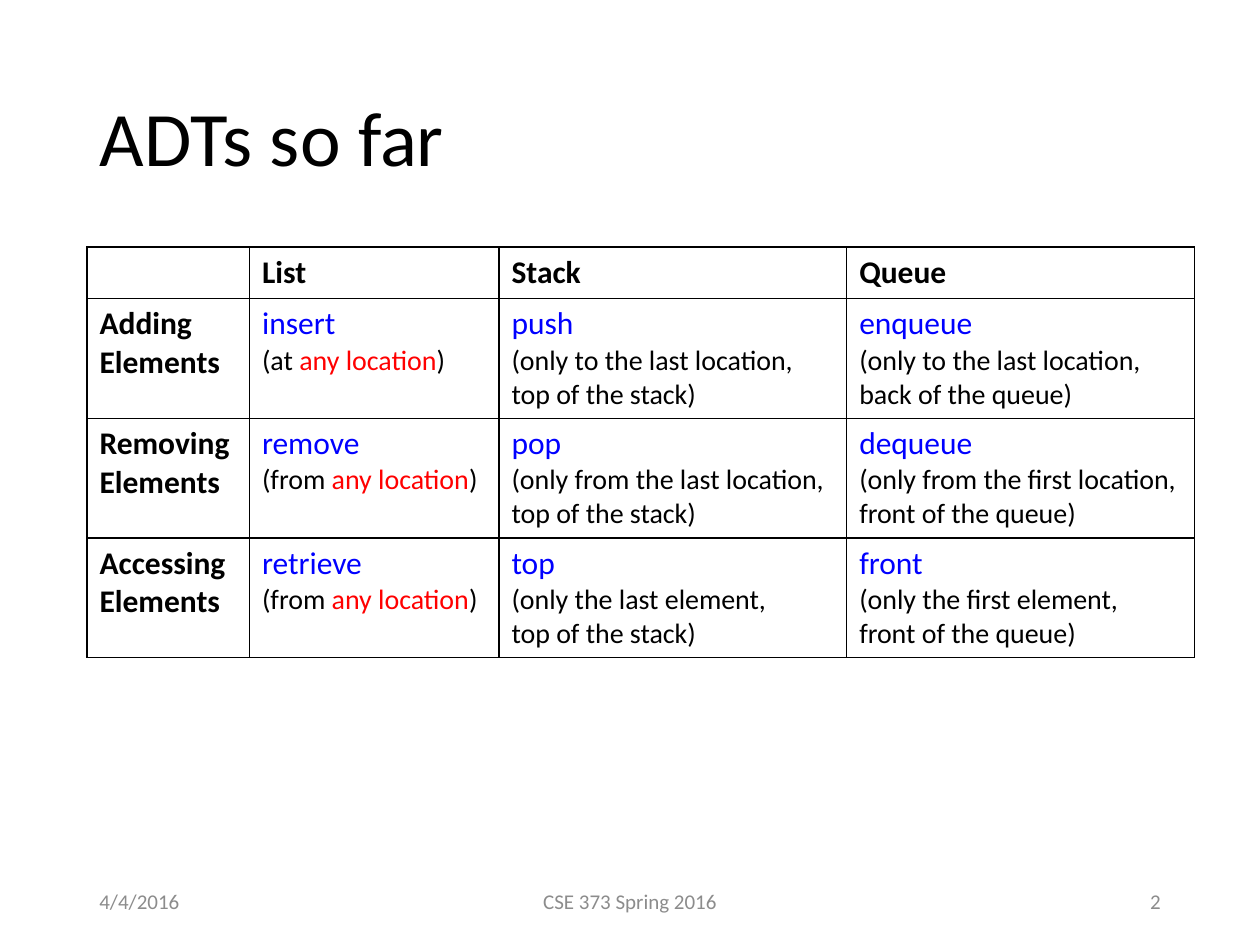
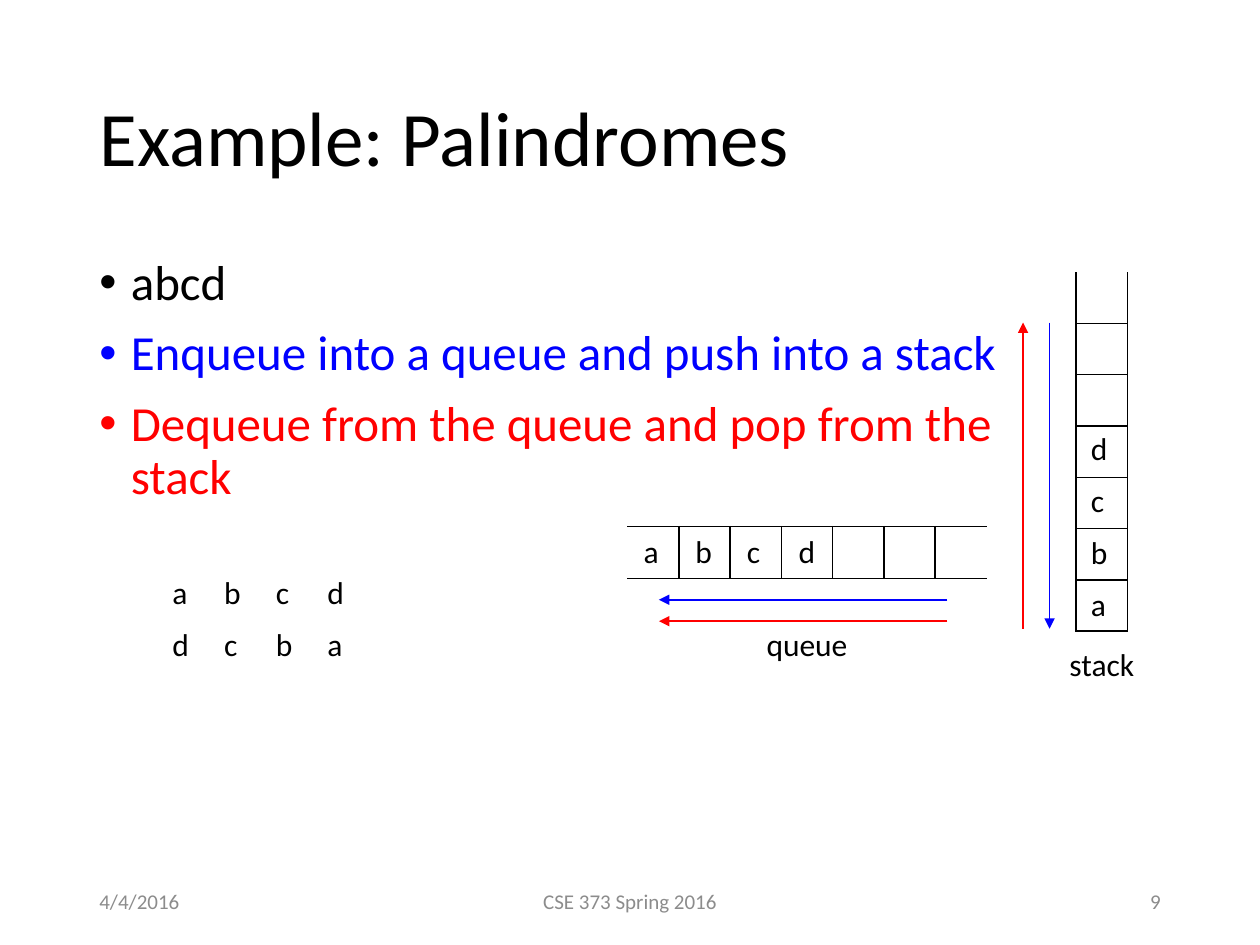
"""Build two slides on list, stack and queue operations and a palindrome check."""

from dataclasses import dataclass

from lxml.etree import SubElement
from pptx import Presentation
from pptx.dml.color import RGBColor
from pptx.enum.shapes import MSO_CONNECTOR
from pptx.enum.text import MSO_ANCHOR, MSO_AUTO_SIZE, PP_ALIGN
from pptx.oxml.ns import qn
from pptx.presentation import Presentation as Deck
from pptx.slide import Slide
from pptx.table import Table, _Cell
from pptx.text.text import TextFrame, _Paragraph
from pptx.util import Inches, Pt


@dataclass(frozen=True)
class Theme:
    font: str = "Calibri"
    ink: str = "000000"
    blue: str = "0000FF"
    red: str = "FF0000"
    gray: str = "8C8C8C"
    title_size: int = 44
    bullet_size: int = 28
    label_size: int = 18
    note_size: int = 16
    footer_size: int = 12
    line_width: int = 1


@dataclass(frozen=True)
class Box:
    left: float
    top: float
    width: float
    height: float

    def lengths(self) -> tuple[int, int, int, int]:
        return (Inches(self.left), Inches(self.top),
                Inches(self.width), Inches(self.height))


@dataclass(frozen=True)
class Operation:
    name: str
    notes: tuple[str, ...]


@dataclass(frozen=True)
class Footer:
    text: str
    box: Box
    align: PP_ALIGN


@dataclass(frozen=True)
class Letters:
    text: str
    left: float
    top: float
    step_x: float = 0
    step_y: float = 0


@dataclass(frozen=True)
class Arrow:
    start: tuple[float, float]
    end: tuple[float, float]
    color: str


THEME = Theme()
TITLE_BOX = Box(0.69, 0.4, 8.62, 1.45)
HIGHLIGHT = "any location"
ALL_EDGES = "LRTB"
SLOTS = 7
SLOT_STEP = 0.41
STORE_LENGTH = 2.85

ADT_NAMES = ("List", "Stack", "Queue")
ADT_COLUMNS = (1.29, 1.98, 2.76, 2.76)
ADT_ROWS = (0.41, 0.95, 0.95, 0.95)
OPERATIONS = {
    "Adding Elements": (
        Operation("insert", ("(at any location)",)),
        Operation("push", ("(only to the last location,", "top of the stack)")),
        Operation("enqueue", ("(only to the last location,", "back of the queue)")),
    ),
    "Removing Elements": (
        Operation("remove", ("(from any location)",)),
        Operation("pop", ("(only from the last location,", "top of the stack)")),
        Operation("dequeue", ("(only from the first location,", "front of the queue)")),
    ),
    "Accessing Elements": (
        Operation("retrieve", ("(from any location)",)),
        Operation("top", ("(only the last element,", "top of the stack)")),
        Operation("front", ("(only the first element,", "front of the queue)")),
    ),
}

STEPS = (
    ("abcd", THEME.ink),
    ("Enqueue into a queue and push into a stack", THEME.blue),
    ("Dequeue from the queue and pop from the stack", THEME.red),
)
LETTERS = (
    Letters("abcd", 5.01, 4.17, step_x=SLOT_STEP),
    Letters("abcd", 8.56, 4.59, step_y=-SLOT_STEP),
    Letters("abcd", 1.27, 4.5, step_x=SLOT_STEP),
    Letters("dcba", 1.27, 4.91, step_x=SLOT_STEP),
)
ARROWS = (
    Arrow((7.52, 4.76), (5.23, 4.76), THEME.blue),
    Arrow((7.52, 4.93), (5.23, 4.93), THEME.red),
    Arrow((8.33, 2.56), (8.33, 4.99), THEME.blue),
    Arrow((8.12, 4.99), (8.12, 2.56), THEME.red),
)
STORE_LABELS = (
    ("queue", Box(5.32, 4.91, 2.17, 0.4)),
    ("stack", Box(8.2, 5.07, 1.09, 0.4)),
)


def style(paragraph: _Paragraph, size: int, color: str = THEME.ink,
          bold: bool = False) -> None:
    font = paragraph.font
    font.name = THEME.font
    font.size = Pt(size)
    font.bold = bold
    font.color.rgb = RGBColor.from_string(color)


def add_text(slide: Slide, text: str, box: Box, size: int,
             color: str = THEME.ink, align: PP_ALIGN = PP_ALIGN.LEFT,
             anchor: MSO_ANCHOR = MSO_ANCHOR.TOP) -> None:
    frame = slide.shapes.add_textbox(*box.lengths()).text_frame
    frame.word_wrap = True
    frame.vertical_anchor = anchor
    paragraph = frame.paragraphs[0]
    paragraph.text = text
    paragraph.alignment = align
    style(paragraph, size, color)


def add_page(deck: Deck, heading: str, number: int) -> Slide:
    slide = deck.slides.add_slide(deck.slide_layouts[5])
    title = slide.shapes.title
    title.left, title.top, title.width, title.height = TITLE_BOX.lengths()
    frame = title.text_frame
    frame.text = heading
    frame.auto_size = MSO_AUTO_SIZE.NONE
    frame.vertical_anchor = MSO_ANCHOR.MIDDLE
    paragraph = frame.paragraphs[0]
    paragraph.alignment = PP_ALIGN.LEFT
    paragraph.line_spacing = 0.9
    style(paragraph, THEME.title_size)

    footers = (
        Footer("4/4/2016", Box(0.69, 6.95, 2.25, 0.4), PP_ALIGN.LEFT),
        Footer(str(number), Box(7.06, 6.95, 2.25, 0.4), PP_ALIGN.RIGHT),
        Footer("CSE 373 Spring 2016", Box(3.31, 6.95, 3.38, 0.4), PP_ALIGN.CENTER),
    )
    for footer in footers:
        add_text(slide, footer.text, footer.box, THEME.footer_size, THEME.gray,
                 footer.align, MSO_ANCHOR.MIDDLE)
    return slide


def draw_edges(cell: _Cell, edges: str) -> None:
    properties = cell._tc.get_or_add_tcPr()
    for edge in ALL_EDGES:
        line = SubElement(properties, qn(f"a:ln{edge}"), w=str(Pt(THEME.line_width)))
        if edge in edges:
            fill = SubElement(line, qn("a:solidFill"))
            SubElement(fill, qn("a:srgbClr"), val=THEME.ink)
        else:
            SubElement(line, qn("a:noFill"))
    cell.fill.background()


def add_grid(slide: Slide, box: Box, rows: tuple[float, ...],
             columns: tuple[float, ...],
             open_edges: dict[tuple[int, int], str]) -> Table:
    table = slide.shapes.add_table(len(rows), len(columns), *box.lengths()).table
    table.first_row = table.horz_banding = False
    for row, height in zip(table.rows, rows):
        row.height = Inches(height)
    for column, width in zip(table.columns, columns):
        column.width = Inches(width)
    for r in range(len(rows)):
        for c in range(len(columns)):
            missing = open_edges.get((r, c), "")
            draw_edges(table.cell(r, c), ALL_EDGES.replace(missing, ""))
    return table


def write_heading(cell: _Cell, text: str) -> None:
    cell.text = text
    style(cell.text_frame.paragraphs[0], THEME.label_size, bold=True)


def write_note(frame: TextFrame, note: str) -> None:
    paragraph = frame.add_paragraph()
    style(paragraph, THEME.note_size)
    for part in filter(None, note.partition(HIGHLIGHT)):
        run = paragraph.add_run()
        run.text = part
        if part == HIGHLIGHT:
            run.font.color.rgb = RGBColor.from_string(THEME.red)


def write_operation(cell: _Cell, operation: Operation) -> None:
    cell.text = operation.name
    style(cell.text_frame.paragraphs[0], THEME.label_size, THEME.blue)
    for note in operation.notes:
        write_note(cell.text_frame, note)


def add_steps(slide: Slide) -> None:
    frame = slide.shapes.add_textbox(*Box(0.69, 2, 7.38, 4.76).lengths()).text_frame
    frame.word_wrap = True
    for index, (step, color) in enumerate(STEPS):
        paragraph = frame.add_paragraph() if index else frame.paragraphs[0]
        paragraph.text = step
        paragraph.line_spacing = 0.9
        paragraph.space_before = Pt(10)
        properties = paragraph._p.get_or_add_pPr()
        properties.set("marL", str(Inches(0.25)))
        properties.set("indent", str(-Inches(0.25)))
        SubElement(properties, qn("a:buFont"), typeface="Arial")
        SubElement(properties, qn("a:buChar"), char="•")
        style(paragraph, THEME.bullet_size, color)


def add_arrow(slide: Slide, arrow: Arrow) -> None:
    points = map(Inches, (*arrow.start, *arrow.end))
    connector = slide.shapes.add_connector(MSO_CONNECTOR.STRAIGHT, *points)
    connector.line.width = Pt(THEME.line_width)
    connector.line.color.rgb = RGBColor.from_string(arrow.color)
    SubElement(connector.line._get_or_add_ln(), qn("a:tailEnd"), type="triangle")
    SubElement(connector._element.spPr, qn("a:effectLst"))


def add_letters(slide: Slide, letters: Letters) -> None:
    for index, letter in enumerate(letters.text):
        box = Box(letters.left + index * letters.step_x,
                  letters.top + index * letters.step_y, 0.39, 0.4)
        add_text(slide, letter, box, THEME.label_size)


def build_adt_slide(deck: Deck) -> None:
    slide = add_page(deck, "ADTs so far", 2)
    box = Box(0.69, 1.96, sum(ADT_COLUMNS), sum(ADT_ROWS))
    table = add_grid(slide, box, ADT_ROWS, ADT_COLUMNS, {})
    for column, name in enumerate(ADT_NAMES, start=1):
        write_heading(table.cell(0, column), name)
    for row, (task, operations) in enumerate(OPERATIONS.items(), start=1):
        write_heading(table.cell(row, 0), task)
        for column, operation in enumerate(operations, start=1):
            write_operation(table.cell(row, column), operation)


def build_palindrome_slide(deck: Deck) -> None:
    slide = add_page(deck, "Example: Palindromes", 9)
    add_steps(slide)
    slots = (STORE_LENGTH / SLOTS,) * SLOTS
    add_grid(slide, Box(4.98, 4.18, STORE_LENGTH, SLOT_STEP), (SLOT_STEP,), slots,
             {(0, 0): "L", (0, SLOTS - 1): "R"})
    add_grid(slide, Box(8.54, 2.16, SLOT_STEP, STORE_LENGTH), slots, (SLOT_STEP,),
             {(0, 0): "T"})
    for arrow in ARROWS:
        add_arrow(slide, arrow)
    for label, box in STORE_LABELS:
        add_text(slide, label, box, THEME.label_size, align=PP_ALIGN.CENTER)
    for letters in LETTERS:
        add_letters(slide, letters)


def main() -> None:
    deck = Presentation()
    deck.slide_width, deck.slide_height = Inches(10), Inches(7.5)
    build_adt_slide(deck)
    build_palindrome_slide(deck)
    deck.save("out.pptx")


if __name__ == "__main__":
    main()
